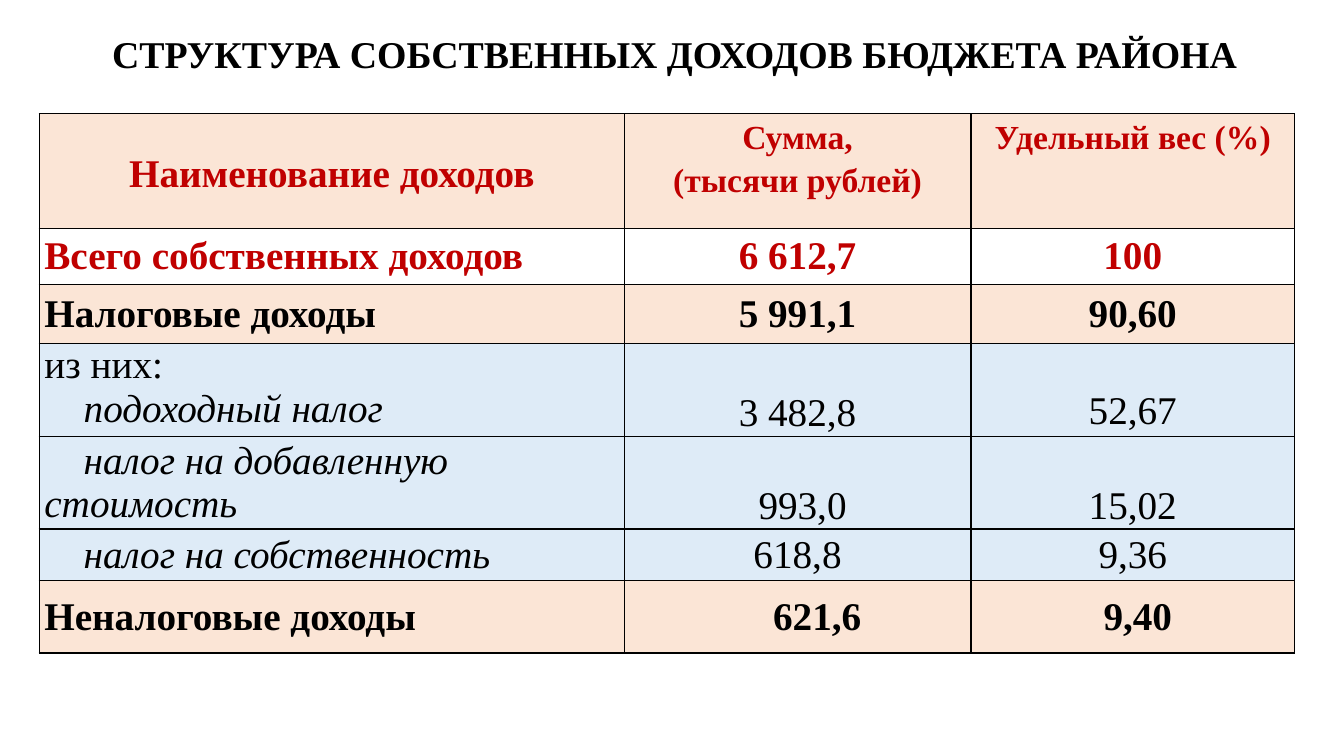
import dataclasses
import typing

import lxml.etree
import pptx
import pptx.dml.color
import pptx.enum.text
import pptx.oxml.ns
import pptx.table
import pptx.text.text
import pptx.util

EMU_PER_PX = 9144
FONT = "Times New Roman"
BLACK, RED, WHITE, PEACH, BLUE = "000000", "C00000", "FFFFFF", "FBE5D6", "DEEBF7"
CENTER = pptx.enum.text.PP_ALIGN.CENTER
LEFT = pptx.enum.text.PP_ALIGN.LEFT
TOP = pptx.enum.text.MSO_ANCHOR.TOP
MIDDLE = pptx.enum.text.MSO_ANCHOR.MIDDLE
BOTTOM = pptx.enum.text.MSO_ANCHOR.BOTTOM
INSET = 5
FIRST_LINE = 39


@dataclasses.dataclass(frozen=True)
class Line:
    text: str
    italic: bool = False
    indent: int = 0


@dataclasses.dataclass(frozen=True)
class Entry:
    lines: tuple[Line, ...]
    anchor: typing.Any = MIDDLE
    size: int = 28
    shift: int = 0
    below: int = 0


@dataclasses.dataclass(frozen=True)
class IncomeRow:
    height: int
    fill: str
    entries: tuple[Entry, Entry, Entry]
    color: str = BLACK
    bold: bool = False
    spacing: float = 1.0


def px(length: int) -> pptx.util.Emu:
    return pptx.util.Emu(length * EMU_PER_PX)


def rgb(color: str) -> pptx.dml.color.RGBColor:
    return pptx.dml.color.RGBColor.from_string(color)


def plain(text: str, **options: typing.Any) -> Entry:
    return Entry((Line(text),), **options)


def tax(text: str) -> Line:
    return Line(text, italic=True, indent=FIRST_LINE)


def add_span(para: typing.Any, text: str, size: int, color: str, bold: bool, italic: bool = False) -> None:
    span = para.add_run()
    span.text = text
    span.font.name = FONT
    span.font.size = pptx.util.Pt(size)
    span.font.bold = bold
    span.font.italic = italic
    span.font.color.rgb = rgb(color)


def add_borders(cell: typing.Any) -> None:
    properties = cell._tc.get_or_add_tcPr()
    qn = pptx.oxml.ns.qn
    for position, side in enumerate(("a:lnL", "a:lnR", "a:lnT", "a:lnB")):
        border = lxml.etree.Element(qn(side), w=str(pptx.util.Pt(1)))
        fill = lxml.etree.SubElement(border, qn("a:solidFill"))
        lxml.etree.SubElement(fill, qn("a:srgbClr"), val=BLACK)
        properties.insert(position, border)


def fill_cell(cell: typing.Any, entry: Entry, row: IncomeRow, align: typing.Any) -> None:
    cell.fill.solid()
    cell.fill.fore_color.rgb = rgb(row.fill)
    cell.vertical_anchor = entry.anchor
    cell.margin_left, cell.margin_right = px(INSET + entry.shift), px(INSET)
    cell.margin_top, cell.margin_bottom = px(0), px(entry.below)
    for number, line in enumerate(entry.lines):
        para = cell.text_frame.add_paragraph() if number else cell.text_frame.paragraphs[0]
        para.alignment = align
        para.line_spacing = row.spacing
        if line.indent:
            para._p.get_or_add_pPr().set("indent", str(px(line.indent)))
        add_span(para, line.text, entry.size, row.color, row.bold, line.italic)
    add_borders(cell)


def add_title(page: typing.Any, text: str) -> None:
    title = page.shapes.title
    title.left, title.top, title.width, title.height = px(94), px(22), px(1150), px(68)
    title.text_frame.vertical_anchor = MIDDLE
    para = title.text_frame.paragraphs[0]
    para.alignment = CENTER
    para.line_spacing = 0.9
    add_span(para, text, 27, BLACK, True)


def add_income_table(page: typing.Any, rows: tuple[IncomeRow, ...], widths: tuple[int, ...]) -> None:
    height = sum(row.height for row in rows)
    frame = page.shapes.add_table(len(rows), len(widths), px(39), px(113), px(sum(widths)), px(height))
    table = frame.table
    table.first_row = False
    table.horz_banding = False
    for column, width in zip(table.columns, widths):
        column.width = px(width)
    for number, row in enumerate(rows):
        table.rows[number].height = px(row.height)
        for column, entry in enumerate(row.entries):
            align = LEFT if number and not column else CENTER
            fill_cell(table.cell(number, column), entry, row, align)


INCOME = (
    IncomeRow(114, PEACH, (
        plain("Наименование доходов"),
        Entry((Line("Сумма,"), Line("(тысячи рублей)")), anchor=TOP, size=24),
        plain("Удельный вес (%)", anchor=TOP, size=24),
    ), color=RED, bold=True, spacing=1.15),
    IncomeRow(55, WHITE, (
        plain("Всего собственных доходов"), plain("6 612,7"), plain("100"),
    ), color=RED, bold=True),
    IncomeRow(59, PEACH, (
        plain("Налоговые доходы"), plain("5 991,1"), plain("90,60"),
    ), bold=True),
    IncomeRow(92, BLUE, (
        Entry((Line("из них:"), tax("подоходный налог")), anchor=TOP),
        plain("3 482,8", anchor=BOTTOM, below=1),
        plain("52,67", anchor=BOTTOM, below=3),
    )),
    IncomeRow(92, BLUE, (
        Entry((tax("налог на добавленную стоимость"),)),
        plain("993,0", anchor=BOTTOM, below=1, shift=10),
        plain("15,02", anchor=BOTTOM, below=1),
    )),
    IncomeRow(51, BLUE, (
        Entry((tax("налог на собственность"),)), plain("618,8"), plain("9,36"),
    )),
    IncomeRow(72, PEACH, (
        plain("Неналоговые доходы"), plain("621,6", shift=39), plain("9,40", shift=10),
    ), bold=True),
)


def main() -> None:
    deck = pptx.Presentation()
    deck.slide_width, deck.slide_height = px(1333), px(750)
    page = deck.slides.add_slide(deck.slide_layouts.get_by_name("Title Only"))
    add_title(page, "СТРУКТУРА СОБСТВЕННЫХ ДОХОДОВ БЮДЖЕТА РАЙОНА")
    add_income_table(page, INCOME, (580, 344, 321))
    deck.save("out.pptx")


if __name__ == "__main__":
    main()
